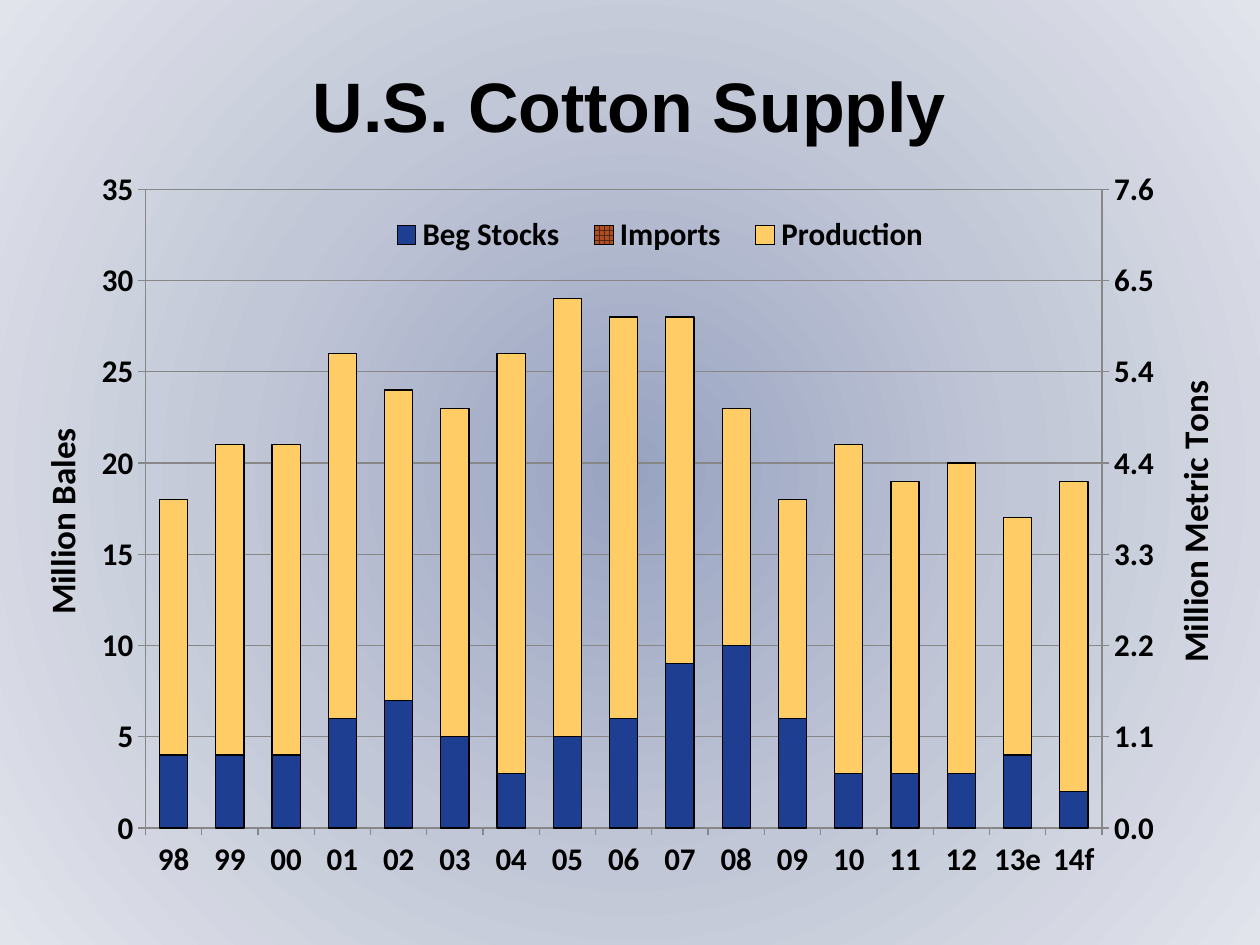
from copy import deepcopy

from pptx import Presentation
from pptx.chart.axis import ValueAxis
from pptx.chart.data import CategoryChartData as Data
from pptx.dml.color import RGBColor as RGB
from pptx.enum.chart import XL_CHART_TYPE as Kind
from pptx.enum.chart import XL_LEGEND_POSITION as Spot
from pptx.enum.chart import XL_TICK_LABEL_POSITION as Label
from pptx.enum.chart import XL_TICK_MARK as Tick
from pptx.enum.dml import MSO_PATTERN as Weave
from pptx.enum.text import MSO_ANCHOR as Anchor
from pptx.enum.text import PP_ALIGN as Align
from pptx.oxml import parse_xml as make
from pptx.oxml.ns import nsdecls, qn
from pptx.util import Pt

BLACK = RGB(0, 0, 0)
GREY = RGB(0x87, 0x87, 0x87)
BLUE = RGB(0x1E, 0x3E, 0x92)
RUST = RGB(0xAE, 0x4E, 0x22)
BROWN = RGB(0x57, 0x27, 0x11)
GOLD = RGB(0xFF, 0xCC, 0x66)
GLOW = [(0, RGB(0x98, 0xA3, 0xC1)), (50, RGB(0xC2, 0xC7, 0xD7)),
        (100, RGB(0xE1, 0xE4, 0xEB))]

YEARS = ["98", "99", "00", "01", "02", "03", "04", "05", "06", "07",
         "08", "09", "10", "11", "12", "13e", "14f"]
BALES = {
    "Beg Stocks": [4, 4, 4, 6, 7, 5, 3, 5, 6, 9, 10, 6, 3, 3, 3, 4, 2],
    "Imports": [0] * 17,
    "Production": [14, 17, 17, 20, 17, 18, 23, 24, 22, 19,
                   13, 12, 18, 16, 17, 13, 17],
}
TONS = {
    "Series 4": [0.8, 0.9, 0.9, 1.3, 1.6, 1.2, 0.8, 1.2, 1.3, 2.1,
                 2.2, 1.4, 0.6, 0.6, 0.7, 0.8, 0.5],
    "Series 5": [0.1] + [0] * 16,
    "Series 6": [3, 3.7, 3.7, 4.4, 3.7, 4, 5.1, 5.2, 4.7, 4.2,
                 2.8, 2.7, 3.9, 3.4, 3.8, 2.8, 3.6],
}
RATIO = 4.59  # bales in a metric ton


def style(font, size, name):
    font.size, font.name, font.bold = Pt(size), name, True
    font.color.rgb = BLACK


def shade(slide):
    """Round glow behind the whole slide."""
    fill = slide.background.fill
    fill.gradient()
    stops = "".join(f'<a:gs pos="{pos * 1000}"><a:srgbClr val="{tint}"/></a:gs>'
                    for pos, tint in GLOW)
    old = slide.element.find(".//" + qn("a:gradFill"))
    old.getparent().replace(old, make(
        f'<a:gradFill {nsdecls("a")} rotWithShape="1"><a:gsLst>{stops}</a:gsLst>'
        '<a:path path="circle"><a:fillToRect l="50000" t="50000" r="50000" '
        'b="50000"/></a:path></a:gradFill>'))


def add_title(slide, text):
    box = slide.shapes.title
    box.left, box.top, box.width, box.height = Pt(18), Pt(24), Pt(683.5), Pt(72)
    frame = box.text_frame
    frame.vertical_anchor = Anchor.MIDDLE
    para = frame.paragraphs[0]
    para.alignment = Align.CENTER
    run = para.add_run()
    run.text = text
    style(run.font, 40, "Arial")


def place(part, inner=False, **spots):
    """Give a chart part a fixed place, in shares of the chart."""
    old = part.find(qn("c:layout"))
    if old is not None:
        part.remove(old)
    items = '<c:layoutTarget val="inner"/>' if inner else ""
    items += "".join(f'<c:{key}Mode val="edge"/>' for key in "xy")
    items += "".join(f'<c:{key} val="{val}"/>' for key, val in spots.items())
    lay = make(f'<c:layout {nsdecls("c")}><c:manualLayout>{items}'
               '</c:manualLayout></c:layout>')
    over = part.find(qn("c:overlay"))
    if over is None:
        part.insert(0, lay)
    else:
        over.addprevious(lay)


def scale(axis, top, step):
    axis.minimum_scale, axis.maximum_scale, axis.major_unit = 0, top, step


def ink(line, tint=BLACK):
    line.color.rgb = tint
    line.width = Pt(0.75)


def paint(plot):
    """Colour the bale bars and clear the bars that carry the ton scale."""
    plot.gap_width, plot.overlap, plot.vary_by_categories = 100, 100, False
    for bar in plot.series:
        bar.invert_if_negative = False
        form = bar.format
        if bar.name in TONS:
            form.fill.background()
            form.line.fill.background()
            continue
        ink(form.line)
        if bar.name == "Imports":
            form.fill.patterned()
            form.fill.pattern = Weave.LARGE_GRID
            form.fill.fore_color.rgb, form.fill.back_color.rgb = BROWN, RUST
        else:
            form.fill.solid()
            form.fill.fore_color.rgb = BLUE if bar.name == "Beg Stocks" else GOLD


def set_axes(chart):
    for axis in (chart.category_axis, chart.value_axis):
        axis.major_tick_mark, axis.minor_tick_mark = Tick.OUTSIDE, Tick.NONE
        style(axis.tick_labels.font, 18, "Calibri")
        ink(axis.format.line, GREY)
    chart.category_axis.tick_label_position = Label.LOW
    left = chart.value_axis
    scale(left, 35, 5)
    left.has_major_gridlines = True
    ink(left.major_gridlines.format.line, GREY)
    run = left.axis_title.text_frame.paragraphs[0].add_run()
    run.text = "Million Bales"
    style(run.font, 20, "Calibri")
    title = left.axis_title._element
    turn = title.find(".//" + qn("a:bodyPr"))
    turn.set("rot", "-5400000")
    turn.set("vert", "horz")
    place(title, x=0, y=0.36)


def add_right(chart):
    """Move the ton series to a second pair of axes."""
    area = chart._chartSpace.find(".//" + qn("c:plotArea"))
    bars, cat, val = (area.find(qn("c:" + tag))
                      for tag in ("barChart", "catAx", "valAx"))
    twin, base, side = map(deepcopy, (bars, cat, val))
    for group, drop in ((bars, slice(3, 6)), (twin, slice(0, 3))):
        for item in group.findall(qn("c:ser"))[drop]:
            group.remove(item)
    for item, num in zip(twin.findall(qn("c:axId")), ("501", "502")):
        item.set("val", num)
    for axis, num, mate in ((base, "501", "502"), (side, "502", "501")):
        axis.find(qn("c:axId")).set("val", num)
        axis.find(qn("c:crossAx")).set("val", mate)
    base.find(qn("c:delete")).set("val", "1")
    side.find(qn("c:axPos")).set("val", "r")
    side.find(qn("c:crosses")).set("val", "max")
    bars.addnext(twin)
    val.addnext(side)
    side.addnext(base)

    right = ValueAxis(side)
    right.has_major_gridlines = False
    scale(right, round(35 / RATIO, 3), round(5 / RATIO, 3))
    right.tick_labels.number_format = "#,##0.0"
    right.tick_labels.number_format_is_linked = False
    right.axis_title.text_frame.paragraphs[0].runs[0].text = "Million Metric Tons"
    place(right.axis_title._element, x=0.964, y=0.295)
    place(area, inner=True, x=0.097, y=0.056, w=0.814, h=0.846)


def add_key(chart):
    """Legend inside the plot, for the bale series only."""
    chart.has_legend = True
    key = chart.legend
    key.position, key.include_in_layout = Spot.TOP, False
    style(key.font, 18, "Calibri")
    spot = key._element.find(qn("c:legendPos"))
    for num in (5, 4, 3):
        spot.addnext(make(f'<c:legendEntry {nsdecls("c")}><c:idx val="{num}"/>'
                          '<c:delete val="1"/></c:legendEntry>'))
    place(key._element, x=0.29, y=0.086, w=0.49, h=0.06)


def add_bars(slide):
    data = Data()
    data.categories = YEARS
    for name, vals in (BALES | TONS).items():
        data.add_series(name, vals)
    chart = slide.shapes.add_chart(Kind.COLUMN_STACKED, Pt(18), Pt(84),
                                   Pt(683.5), Pt(431.5), data).chart
    chart.has_title = False
    style(chart.font, 18, "Calibri")
    paint(chart.plots[0])
    set_axes(chart)
    add_right(chart)
    add_key(chart)


def main():
    deck = Presentation()
    deck.slide_width, deck.slide_height = Pt(720), Pt(540)
    slide = deck.slides.add_slide(deck.slide_layouts[5])
    shade(slide)
    add_title(slide, "U.S. Cotton Supply")
    add_bars(slide)
    deck.save("out.pptx")


if __name__ == "__main__":
    main()
